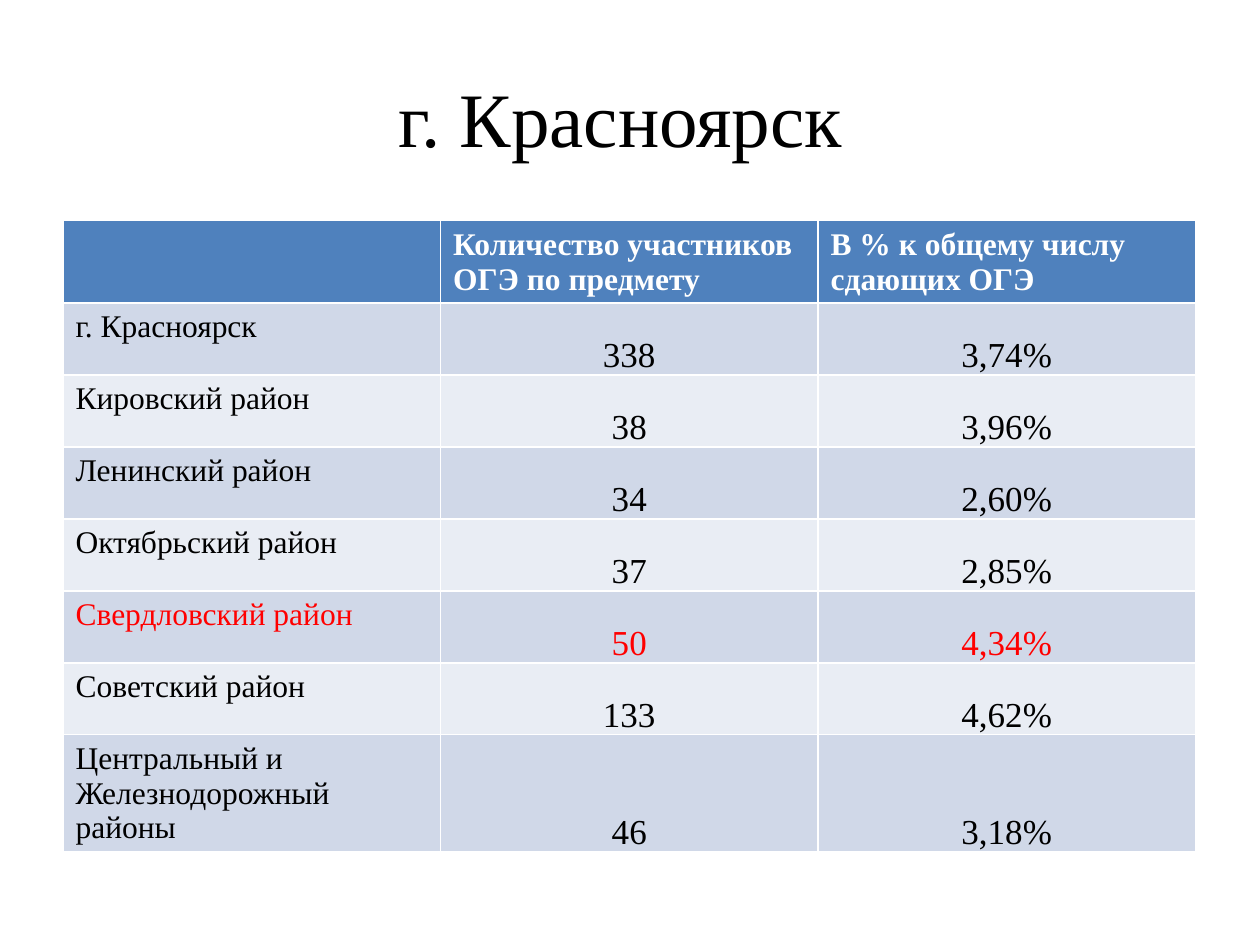
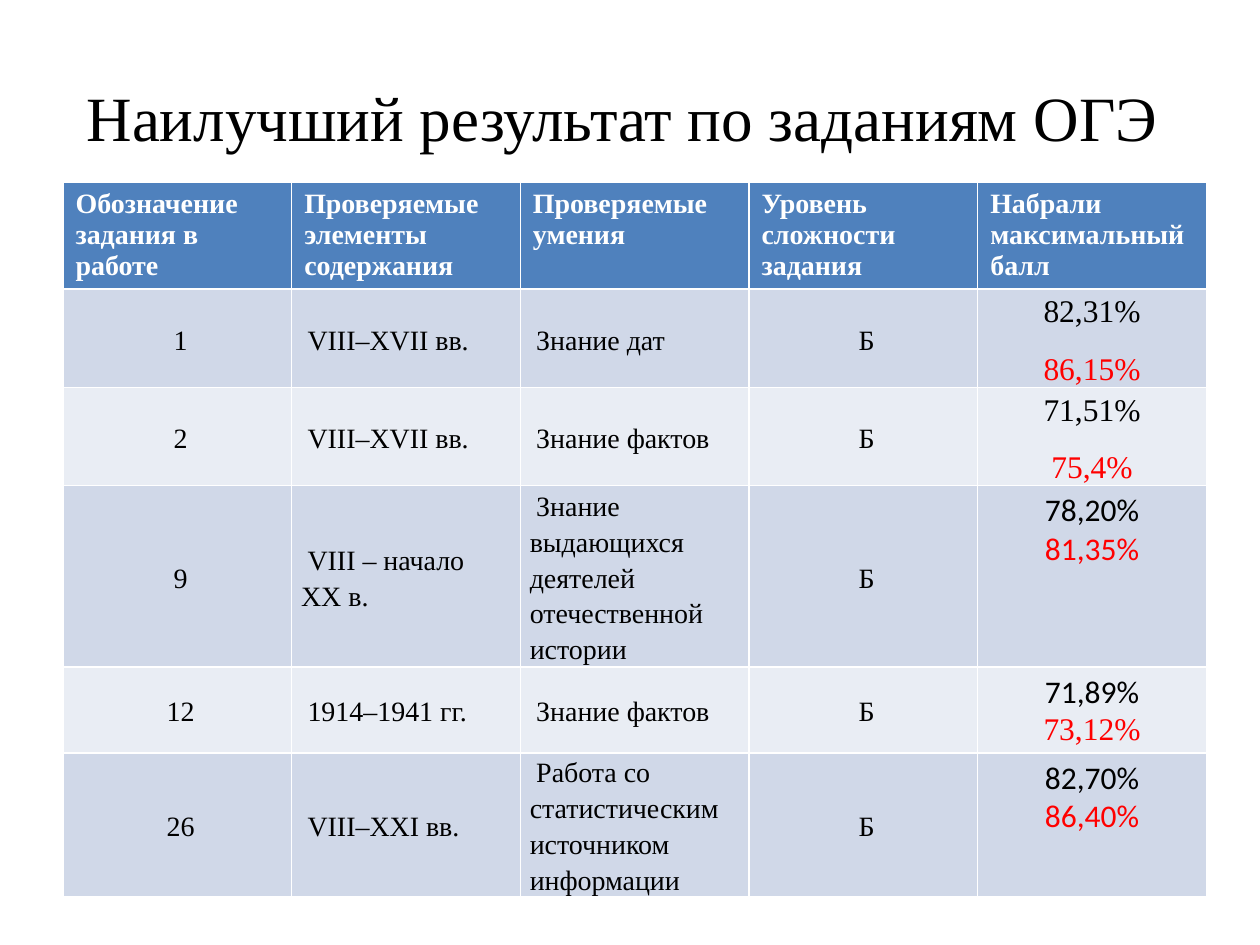
from dataclasses import dataclass, replace
from itertools import cycle

from pptx import Presentation
from pptx.dml.color import RGBColor
from pptx.enum import text
from pptx.util import Cm, Pt

BLACK = RGBColor(0x00, 0x00, 0x00)
WHITE = RGBColor(0xFF, 0xFF, 0xFF)
RED = RGBColor(0xFF, 0x00, 0x00)
HEADER_BLUE = RGBColor(0x4F, 0x81, 0xBD)
BANDS = (RGBColor(0xD0, 0xD8, 0xE8), RGBColor(0xE9, 0xED, 0xF4))

SERIF = "Times New Roman"
SANS = "Calibri"
TITLE_ONLY = 5
TABLE_LEFT = Cm(1.27)
CENTER = text.PP_ALIGN.CENTER
LEFT = text.PP_ALIGN.LEFT
TOP, MIDDLE, BOTTOM = (text.MSO_ANCHOR.TOP, text.MSO_ANCHOR.MIDDLE,
                       text.MSO_ANCHOR.BOTTOM)


@dataclass(frozen=True)
class CellStyle:
    """Look of a cell; fonts and colors hold one entry per paragraph, repeated."""
    size: int
    fonts: tuple = (SERIF,)
    colors: tuple = (BLACK,)
    bold: bool = False
    align: int = LEFT
    anchor: int = TOP
    tight: bool = False
    spacing: float = 1.0
    after: int = 0
    indent: float = 0


class Deck:
    def __init__(self):
        self.presentation = Presentation()
        self.presentation.slide_width = Cm(25.4)
        self.presentation.slide_height = Cm(19.05)
        self.page = None

    def add_page(self, title, size):
        layout = self.presentation.slide_layouts[TITLE_ONLY]
        self.page = self.presentation.slides.add_slide(layout)
        box = self.page.shapes.title
        box.left, box.top = Cm(1.27), Cm(0.76)
        box.width, box.height = Cm(22.86), Cm(3.18)
        frame = box.text_frame
        frame.text = title
        frame.vertical_anchor = MIDDLE
        frame.paragraphs[0].alignment = CENTER
        self.format_font(frame.paragraphs[0], size, SERIF, BLACK)

    def add_table(self, top, column_width, row_heights, header, header_style, body):
        """Body is a list of rows, each a list of (wording, CellStyle)."""
        rows = [[(wording, header_style) for wording in header]] + body
        frame = self.page.shapes.add_table(
            len(rows), len(header), TABLE_LEFT, top,
            column_width * len(header), sum(row_heights))
        table = frame.table
        for column in table.columns:
            column.width = column_width
        for index, (row, height) in enumerate(zip(rows, row_heights)):
            table.rows[index].height = height
            fill = BANDS[(index - 1) % 2] if index else HEADER_BLUE
            for cell, (wording, style) in zip(table.rows[index].cells, row):
                self.fill_cell(cell, wording, style, fill)

    def fill_cell(self, cell, wording, style, fill):
        cell.fill.solid()
        cell.fill.fore_color.rgb = fill
        cell.vertical_anchor = style.anchor
        if style.tight:
            cell.margin_left = cell.margin_right = Cm(0.19)
            cell.margin_top = cell.margin_bottom = 0
        cell.text_frame.text = wording
        for para, font, color in zip(cell.text_frame.paragraphs,
                                     cycle(style.fonts), cycle(style.colors)):
            para.alignment = style.align
            para.line_spacing = style.spacing
            para.space_after = Pt(style.after)
            if style.indent:
                para._p.get_or_add_pPr().set("indent", str(Cm(style.indent)))
            self.format_font(para, style.size, font, color, style.bold)

    @staticmethod
    def format_font(para, size, name, color, bold=False):
        for span in para.runs:
            span.font.size = Pt(size)
            span.font.name = name
            span.font.bold = bold
            span.font.color.rgb = color

    def save(self):
        self.presentation.save("out.pptx")


def add_districts(deck):
    districts = [
        ("г. Красноярск", "338", "3,74%"),
        ("Кировский район", "38", "3,96%"),
        ("Ленинский район", "34", "2,60%"),
        ("Октябрьский район", "37", "2,85%"),
        ("Свердловский район", "50", "4,34%"),
        ("Советский район", "133", "4,62%"),
        ("Центральный и Железнодорожный районы", "46", "3,18%"),
    ]
    highlighted = "Свердловский район"
    name_style = CellStyle(18)
    value_style = CellStyle(20, align=CENTER, anchor=BOTTOM, tight=True, spacing=1.15)
    body = []
    for district in districts:
        colors = (RED,) if district[0] == highlighted else (BLACK,)
        styles = (name_style, value_style, value_style)
        body.append([(wording, replace(style, colors=colors))
                     for wording, style in zip(district, styles)])

    deck.add_page("г. Красноярск ", 44)
    deck.add_table(
        Cm(4.45), Cm(7.61), [Cm(1.45)] * (len(districts) + 1),
        ["", "Количество участников ОГЭ по предмету", "В % к общему числу сдающих ОГЭ"],
        CellStyle(18, colors=(WHITE,), bold=True), body)


def add_best_tasks(deck):
    label = CellStyle(16, anchor=MIDDLE, tight=True, spacing=1.15, indent=0.13)
    centered = replace(label, align=CENTER)
    spaced = CellStyle(18, colors=(BLACK, RED), align=CENTER, anchor=MIDDLE,
                       tight=True, spacing=1.15, after=10)
    plain = CellStyle(18, fonts=(SANS,), colors=(BLACK, RED), align=CENTER)
    mixed = replace(plain, fonts=(SANS, SERIF))
    tasks = [
        ("1", "VIII–XVII вв.", "Знание дат", "82,31%\n86,15%", spaced),
        ("2", "VIII–XVII вв.", "Знание фактов", "71,51%\n75,4%", spaced),
        ("9", "VIII – начало XX в.", "Знание выдающихся деятелей отечественной истории",
         "78,20%\n81,35%", plain),
        ("12", "1914–1941 гг.", "Знание фактов", "71,89%\n73,12%", mixed),
        ("26", "VIII–XXI вв.", "Работа со статистическим источником информации",
         "82,70%\n86,40%", plain),
    ]
    body = [[(number, centered), (period, label), (skill, label),
             ("Б", centered), (scores, score_style)]
            for number, period, skill, scores, score_style in tasks]

    deck.add_page("Наилучший результат по заданиям ОГЭ ", 36)
    deck.add_table(
        Cm(3.67), Cm(4.61), [Cm(h) for h in (2.16, 1.98, 1.98, 3.66, 1.68, 2.62)],
        ["Обозначение задания в работе", "Проверяемые элементы содержания",
         "Проверяемые умения", "Уровень сложности задания", "Набрали максимальный балл"],
        CellStyle(16, colors=(WHITE,), bold=True), body)


def main():
    deck = Deck()
    add_districts(deck)
    add_best_tasks(deck)
    deck.save()


if __name__ == "__main__":
    main()
